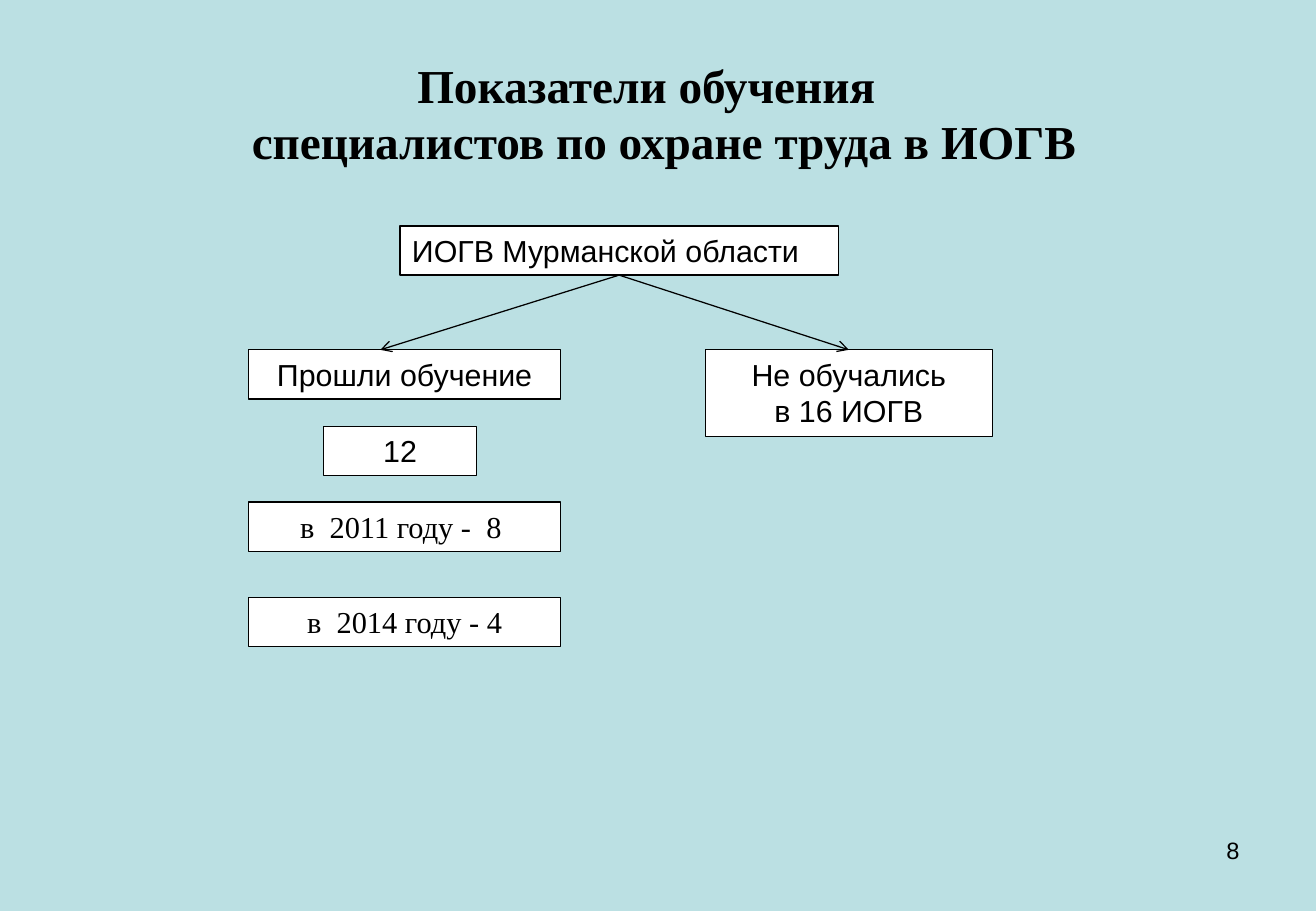
from dataclasses import dataclass

from lxml import etree
from pptx import Presentation
from pptx import util as u
from pptx.dml.color import RGBColor
from pptx.enum import shapes, text
from pptx.oxml import ns


@dataclass(frozen=True)
class Theme:
    background: RGBColor = RGBColor(0xBB, 0xE0, 0xE3)
    box: RGBColor = RGBColor(0xFF, 0xFF, 0xFF)
    ink: RGBColor = RGBColor(0, 0, 0)
    sans: str = "Arial"
    serif: str = "Times New Roman"
    title_size: int = 28
    body_size: int = 18
    number_size: int = 14
    line_width: float = 0.75


@dataclass(frozen=True)
class Area:
    """Place and size in percent of the slide's width and height."""
    left: float
    top: float
    width: float
    height: float


@dataclass(frozen=True)
class Box:
    area: Area
    lines: tuple[str, ...]
    font: str
    align: text.PP_ALIGN = text.PP_ALIGN.CENTER


THEME = Theme()
WIDTH, HEIGHT = u.Inches(10.83), u.Inches(7.5)

# Grid shared by the boxes
ROW = 5.4
BRANCH_TOP = 38.4
LEFT, LEFT_WIDTH = 18.9, 23.7

TITLE = Area(5, 4, 90, 16.7)
NUMBER = Area(71.7, 91.1, 23.4, 6.9)
ROOT = Box(Area(30.4, 24.8, 33.3, ROW), ("ИОГВ Мурманской области",),
           THEME.sans, text.PP_ALIGN.LEFT)
TRAINED = Box(Area(LEFT, BRANCH_TOP, LEFT_WIDTH, ROW), ("Прошли обучение",), THEME.sans)
UNTRAINED = Box(Area(53.6, BRANCH_TOP, 21.8, 9.5), ("Не обучались", "в 16 ИОГВ"), THEME.sans)
TOTAL = Box(Area(24.6, 46.8, 11.6, ROW), (" 12 ",), THEME.sans)
YEAR_2011 = Box(Area(LEFT, 55.1, LEFT_WIDTH, ROW), ("в  2011 году -  8 ",), THEME.serif)
YEAR_2014 = Box(Area(LEFT, 65.6, LEFT_WIDTH, ROW), ("в  2014 году - 4",), THEME.serif)
BOXES = (ROOT, TRAINED, UNTRAINED, YEAR_2011, YEAR_2014, TOTAL)


def across(share: float) -> u.Emu:
    return u.Emu(round(WIDTH * share / 100))


def down(share: float) -> u.Emu:
    return u.Emu(round(HEIGHT * share / 100))


def place(area: Area) -> tuple[u.Emu, ...]:
    return across(area.left), down(area.top), across(area.width), down(area.height)


def write(shape, *lines: str, font: str, size: int, align: text.PP_ALIGN,
          bold: bool = False, anchor=text.MSO_ANCHOR.TOP) -> None:
    frame = shape.text_frame
    frame.word_wrap = True
    frame.vertical_anchor = anchor
    frame.text = "\n".join(lines)
    for paragraph in frame.paragraphs:
        paragraph.alignment = align
        for run in paragraph.runs:
            run.font.name = font
            run.font.size = u.Pt(size)
            run.font.bold = bold
            run.font.color.rgb = THEME.ink


def draw_box(slide, box: Box) -> None:
    shape = slide.shapes.add_shape(shapes.MSO_SHAPE.RECTANGLE, *place(box.area))
    shape.shadow.inherit = False
    shape.fill.solid()
    shape.fill.fore_color.rgb = THEME.box
    shape.line.color.rgb = THEME.ink
    shape.line.width = u.Pt(THEME.line_width)
    write(shape, *box.lines, font=box.font, size=THEME.body_size, align=box.align)
    shape.text_frame.auto_size = text.MSO_AUTO_SIZE.SHAPE_TO_FIT_TEXT


def draw_arrow(slide, source: Area, end_x: float) -> None:
    """Runs from the bottom centre of the source to the branch row."""
    arrow = slide.shapes.add_connector(
        shapes.MSO_CONNECTOR.STRAIGHT,
        across(source.left + source.width / 2), down(source.top + source.height),
        across(end_x), down(BRANCH_TOP))
    arrow.line.color.rgb = THEME.ink
    arrow.line.width = u.Pt(THEME.line_width)
    etree.SubElement(arrow.line._get_or_add_ln(), ns.qn("a:tailEnd"), type="arrow")
    etree.SubElement(arrow._element.spPr, ns.qn("a:effectLst"))


def main() -> None:
    presentation = Presentation()
    presentation.slide_width, presentation.slide_height = WIDTH, HEIGHT
    slide = presentation.slides.add_slide(presentation.slide_layouts[6])
    slide.background.fill.solid()
    slide.background.fill.fore_color.rgb = THEME.background

    # Title and slide number
    title = slide.shapes.add_textbox(*place(TITLE))
    write(title, "Показатели обучения  \v специалистов по охране труда в ИОГВ",
          font=THEME.serif, size=THEME.title_size, align=text.PP_ALIGN.CENTER,
          bold=True, anchor=text.MSO_ANCHOR.MIDDLE)
    number = slide.shapes.add_textbox(*place(NUMBER))
    write(number, "8", font=THEME.sans, size=THEME.number_size, align=text.PP_ALIGN.RIGHT)

    # Boxes of the tree
    for box in BOXES:
        draw_box(slide, box)

    # Arrows to the two branches
    for end_x in (UNTRAINED.area.left + UNTRAINED.area.width / 2, 28.9):
        draw_arrow(slide, ROOT.area, end_x)

    presentation.save("out.pptx")


if __name__ == "__main__":
    main()
